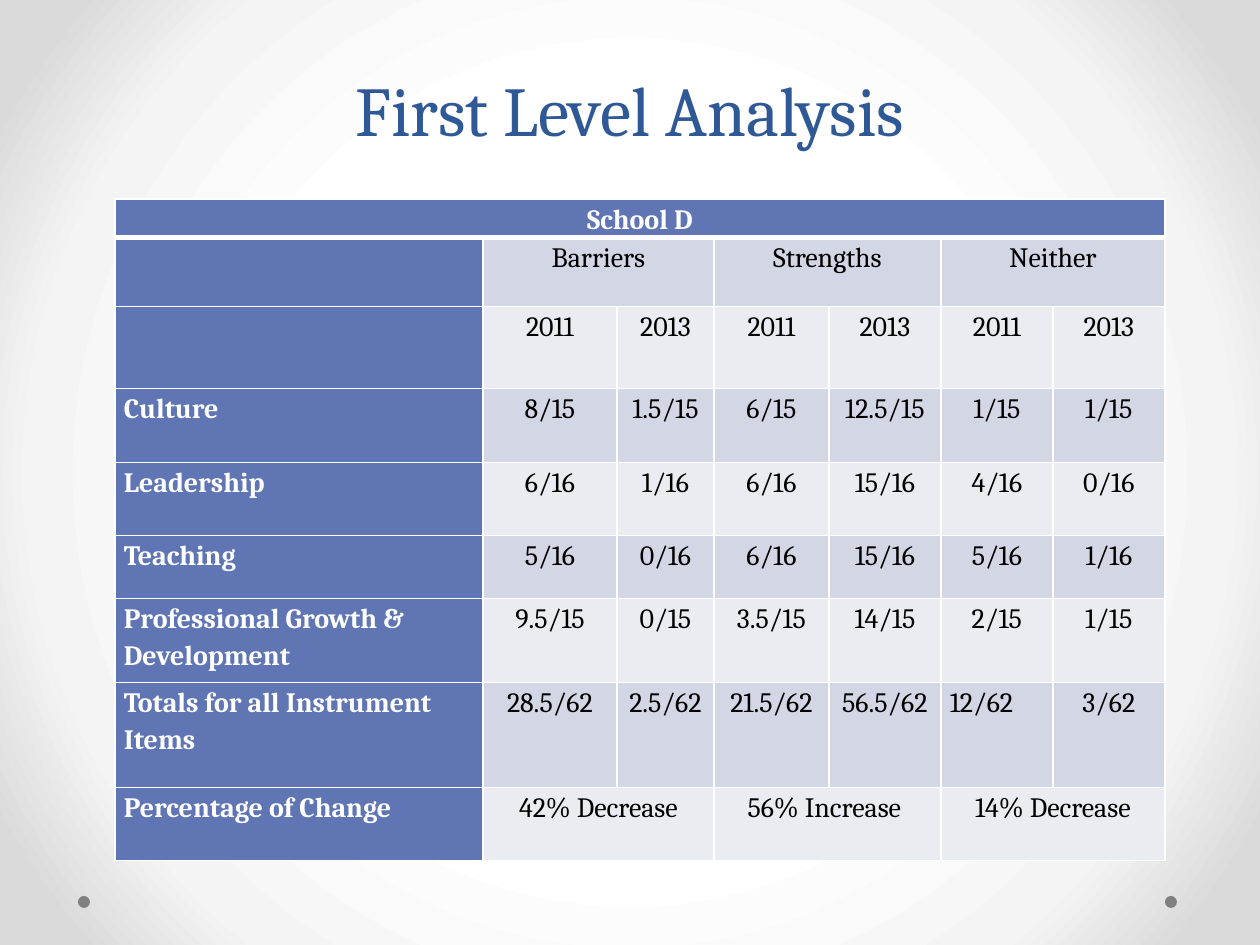
import pptx
import pptx.dml.color
import pptx.enum.shapes
import pptx.enum.text
import pptx.oxml
import pptx.oxml.ns
import pptx.util

PX = 914400 / 126
THEME = {
    "font": "Cambria", "title_size": 40, "body_size": 16, "title": "2F5897",
    "head": "6076B4", "bands": ("EAECF2", "D2D6E5"), "white": "FFFFFF",
    "black": "000000", "dot": "808080",
    "backdrop": ((50, "FFFFFF"), (76, "F4F4F4"), (92, "DADADA")),
}
NS = pptx.oxml.ns.nsdecls("a", "p")
RGB = pptx.dml.color.RGBColor.from_string
ALIGN = pptx.enum.text.PP_ALIGN


def px(*values):
    return [round(v * PX) for v in values]


def add_text(p, text, size, color, bold, align):
    p.alignment = align
    r = p.add_run()
    r.text = text
    r.font.name = THEME["font"]
    r.font.size = pptx.util.Pt(size)
    r.font.bold = bold
    r.font.color.rgb = RGB(color)


prs = pptx.Presentation()
prs.slide_width, prs.slide_height = px(1260, 945)
s = prs.slides.add_slide(prs.slide_layouts[6])

stops = "".join(
    f'<a:gs pos="{pos * 1000}"><a:srgbClr val="{color}"/></a:gs>'
    for pos, color in THEME["backdrop"]
)
s.element[0].insert(0, pptx.oxml.parse_xml(
    f'<p:bg {NS}><p:bgPr><a:gradFill rotWithShape="1"><a:gsLst>{stops}</a:gsLst>'
    '<a:path path="circle"><a:fillToRect l="50000" t="50000" r="50000" b="50000"/>'
    '</a:path></a:gradFill><a:effectLst/></p:bgPr></p:bg>'
))

for x in (1165, 78):
    sp = s.shapes.add_shape(pptx.enum.shapes.MSO_SHAPE.OVAL, *px(x, 896, 12, 12))
    sp.shadow.inherit = False
    sp.fill.solid()
    sp.fill.fore_color.rgb = RGB(THEME["dot"])
    sp.line.fill.background()

tf = s.shapes.add_textbox(*px(63, 0, 1134, 157)).text_frame
tf.word_wrap = True
tf.vertical_anchor = pptx.enum.text.MSO_ANCHOR.BOTTOM
p = tf.paragraphs[0]
p.line_spacing = pptx.util.Pt(58)
add_text(p, "First Level Analysis", THEME["title_size"], THEME["title"], False, ALIGN.CENTER)

rows = [
    ["School D", "", "", "", "", "", ""],
    ["", "Barriers", "", "Strengths", "", "Neither", ""],
    ["", "2011", "2013", "2011", "2013", "2011", "2013"],
    ["Culture", "8/15", "1.5/15", "6/15", "12.5/15", "1/15", "1/15"],
    ["Leadership", "6/16", "1/16", "6/16", "15/16", "4/16", "0/16"],
    ["Teaching", "5/16", "0/16", "6/16", "15/16", "5/16", "1/16"],
    ["Professional Growth & Development", "9.5/15", "0/15", "3.5/15", "14/15", "2/15", "1/15"],
    ["Totals for all Instrument Items", "28.5/62", "2.5/62", "21.5/62", "56.5/62", "12/62", "3/62"],
    ["Percentage of Change", "42% Decrease", "", "56% Increase ", "", "14% Decrease", ""],
]
widths = [368, 134, 97, 115, 112, 112, 112]
heights = [37, 69, 82, 74, 73, 63, 84, 105, 73]

table = s.shapes.add_table(
    len(rows), len(widths), *px(115, 199, sum(widths), sum(heights))
).table
for column, width in zip(table.columns, px(*widths)):
    column.width = width
for row, height in zip(table.rows, px(*heights)):
    row.height = height

table.cell(0, 0).merge(table.cell(0, 6))
for i in (1, 8):
    for j in (1, 3, 5):
        table.cell(i, j).merge(table.cell(i, j + 1))

for i, row in enumerate(rows):
    for j, text in enumerate(row):
        cell = table.cell(i, j)
        head = i == 0 or j == 0
        cell.margin_left, cell.margin_right = px(9, 9)
        cell.margin_top = cell.margin_bottom = 0
        cell.fill.solid()
        cell.fill.fore_color.rgb = RGB(THEME["head"] if head else THEME["bands"][i % 2])
        tcPr = cell._tc.get_or_add_tcPr()
        for k, side in enumerate("LRTB"):
            thick = (i, side) in ((0, "B"), (1, "T"))
            tcPr.insert(k, pptx.oxml.parse_xml(
                f'<a:ln{side} {NS} w="{38100 if thick else 12700}"><a:solidFill>'
                f'<a:srgbClr val="{THEME["white"]}"/></a:solidFill></a:ln{side}>'
            ))
        if text:
            left = (i > 0 and j == 0) or text == "12/62"
            p = cell.text_frame.paragraphs[0]
            p.line_spacing = 1.15
            add_text(p, text, THEME["body_size"], THEME["white" if head else "black"],
                     head, ALIGN.LEFT if left else ALIGN.CENTER)

prs.save("out.pptx")
